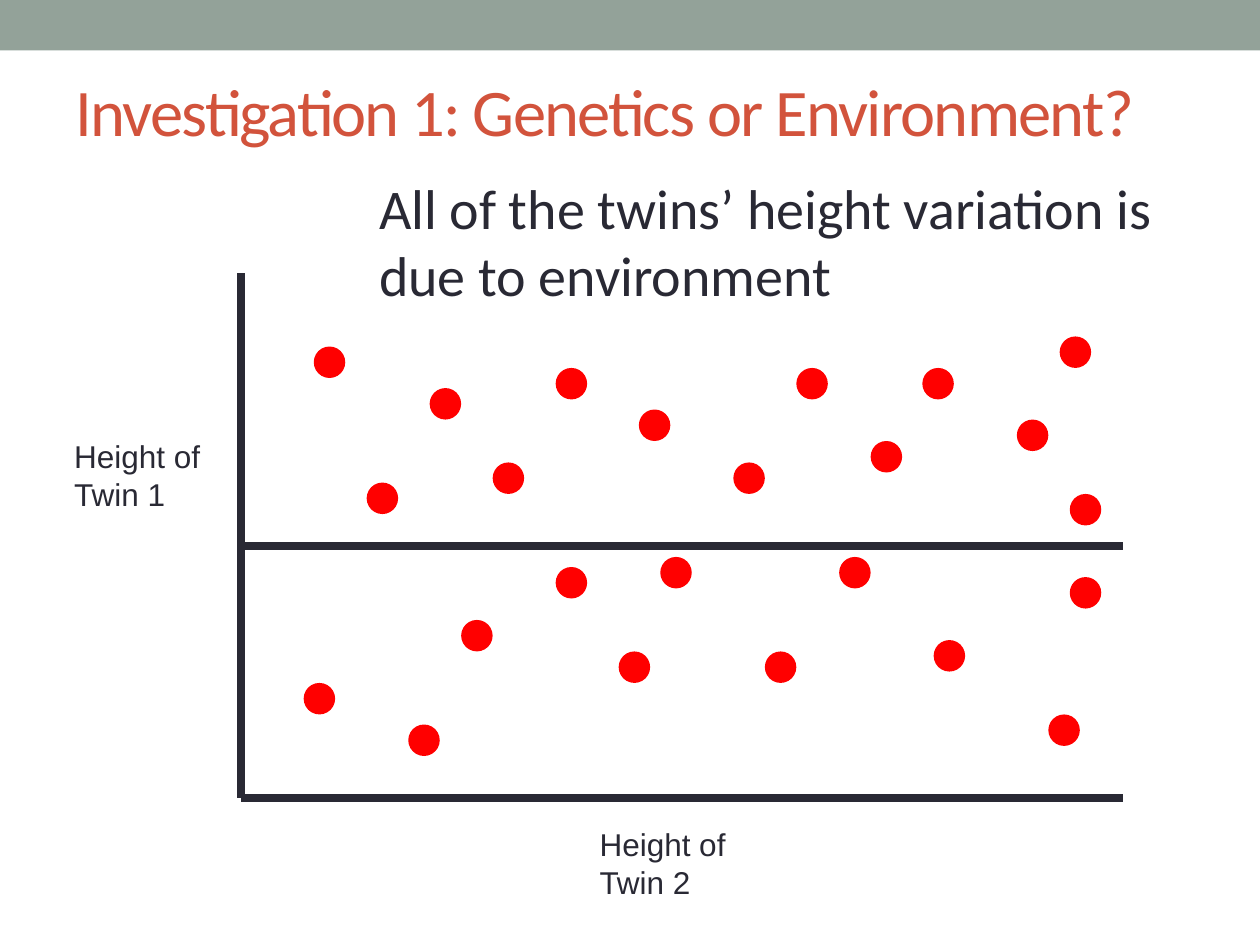
from pptx import Presentation
from pptx.dml.color import RGBColor
from pptx.enum import shapes, text
from pptx.oxml.ns import qn
from pptx.util import Inches, Pt
from lxml import etree

INK = "292934"
DOT_SIZE = 0.25
LEFT, RIGHT, TOP, MIDDLE, BOTTOM = 1.91, 8.91, 2.17, 4.33, 6.33
DOTS = [
    (2.49, 2.75), (2.41, 5.42), (2.91, 3.83), (3.66, 4.92), (4.41, 2.92),
    (4.91, 5.17), (6.07, 5.17), (3.41, 3.08), (5.24, 4.42), (6.32, 2.92),
    (7.41, 5.08), (8.41, 2.67), (8.49, 4.58), (3.24, 5.75), (5.07, 3.25),
    (6.66, 4.42), (3.91, 3.67), (7.32, 2.92), (8.32, 5.67), (6.91, 3.5),
    (5.82, 3.67), (8.49, 3.92), (8.07, 3.33), (4.41, 4.5),
]


def rgb(value):
    """Return the colour for a hex string."""
    return RGBColor.from_string(value)


def set_attrs(obj, **values):
    """Set each named attribute of an object."""
    for name, value in values.items():
        setattr(obj, name, value)


def add_filled(s, kind, box, color):
    """Add a preset shape with a plain fill and no outline."""
    sp = s.shapes.add_shape(kind, *map(Inches, box))
    sp.shadow.inherit = False
    sp.fill.solid()
    sp.fill.fore_color.rgb = rgb(color)
    sp.line.fill.background()


def add_line(s, *points):
    """Add a thick straight line of the plot."""
    line = s.shapes.add_connector(shapes.MSO_CONNECTOR.STRAIGHT, *map(Inches, points))
    line.line.color.rgb = rgb(INK)
    line.line.width = Pt(4.5)
    etree.SubElement(line._element.spPr, qn("a:effectLst"))


def write(tf, words, size, font, color=INK):
    """Write one left-aligned paragraph and format its runs."""
    tf.text = words
    p = tf.paragraphs[0]
    p.alignment = text.PP_ALIGN.LEFT
    for r in p.runs:
        set_attrs(r.font, size=Pt(size), name=font)
        r.font.color.rgb = rgb(color)
    return p


def add_label(s, box, words, size, font, wrap=True):
    """Add a text box with one paragraph."""
    tf = s.shapes.add_textbox(*map(Inches, box)).text_frame
    set_attrs(tf, word_wrap=wrap, auto_size=text.MSO_AUTO_SIZE.SHAPE_TO_FIT_TEXT)
    write(tf, words, size, font)


def set_title(s, box, words):
    """Place and format the title placeholder."""
    sp = s.shapes.title
    for name, value in zip(("left", "top", "width", "height"), box):
        setattr(sp, name, Inches(value))
    set_attrs(sp.text_frame, word_wrap=True, auto_size=text.MSO_AUTO_SIZE.NONE,
              vertical_anchor=text.MSO_ANCHOR.MIDDLE)
    for r in write(sp.text_frame, words, 38, "Calibri", "D2533C").runs:
        r.font._element.set("spc", "-100")


def main():
    """Build the twin height slide."""
    prs = Presentation()
    set_attrs(prs, slide_width=Inches(10), slide_height=Inches(7.5))
    s = prs.slides.add_slide(prs.slide_layouts[5])
    add_filled(s, shapes.MSO_SHAPE.RECTANGLE, (0, 0, 10, 0.4), "93A299")
    set_title(s, (0.5, 0.5, 9, 0.75), "Investigation 1: Genetics or Environment?")
    add_line(s, LEFT, TOP, LEFT, BOTTOM)
    for y in (BOTTOM, MIDDLE):
        add_line(s, RIGHT, y, LEFT, y)
    for x, y in DOTS:
        add_filled(s, shapes.MSO_SHAPE.OVAL, (x, y, DOT_SIZE, DOT_SIZE), "FF0000")
    add_label(s, (4.66, 6.5, 1.78, 0.71), "Height of\vTwin 2", 18, "Arial")
    add_label(s, (0.49, 3.42, 1.33, 0.71), "Height of\vTwin 1", 18, "Arial")
    add_label(s, (2.91, 1.33, 6.51, 1.18),
              "All of the twins’ height variation is\vdue to environment",
              32, "Calibri", wrap=False)
    prs.save("out.pptx")


if __name__ == "__main__":
    main()
